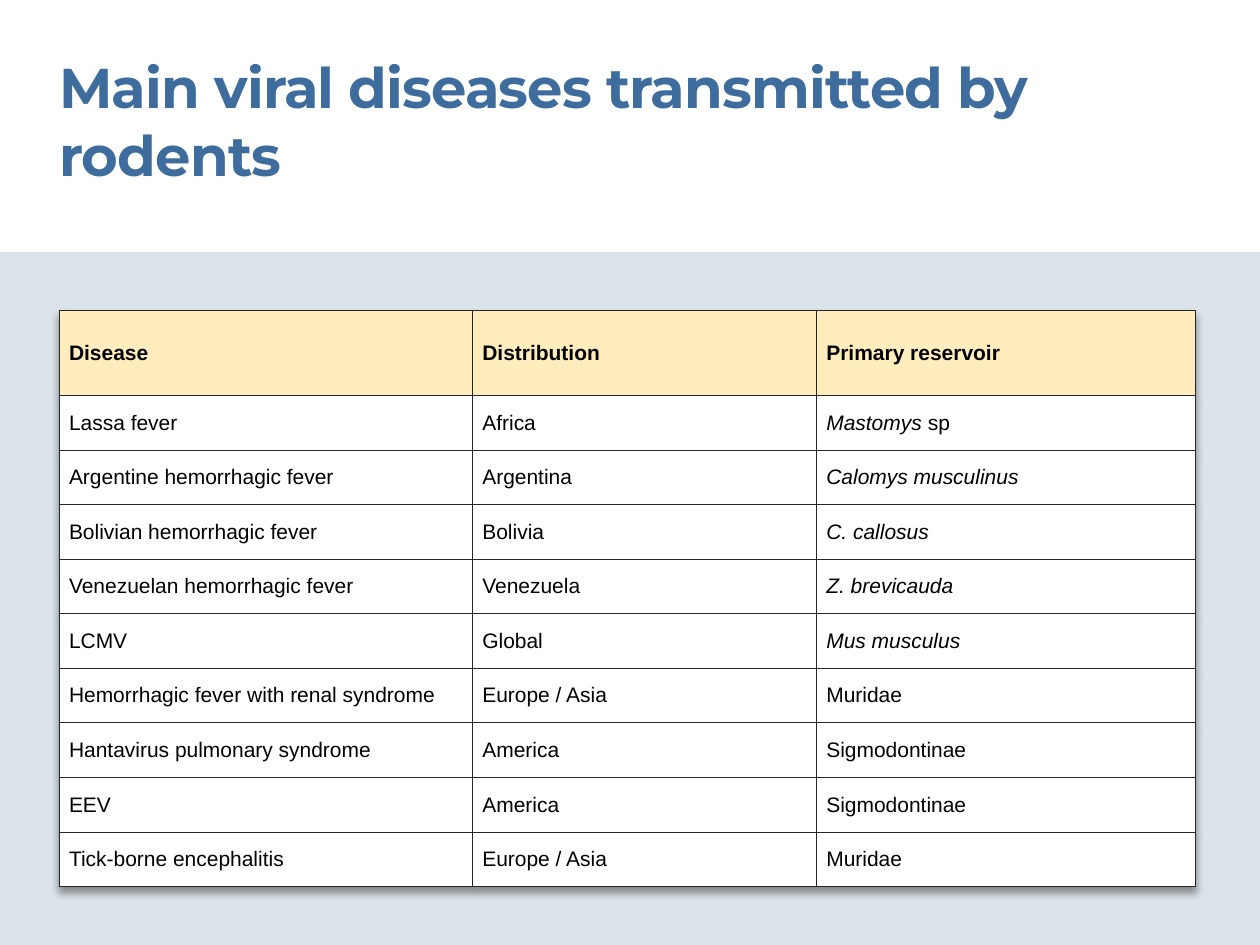
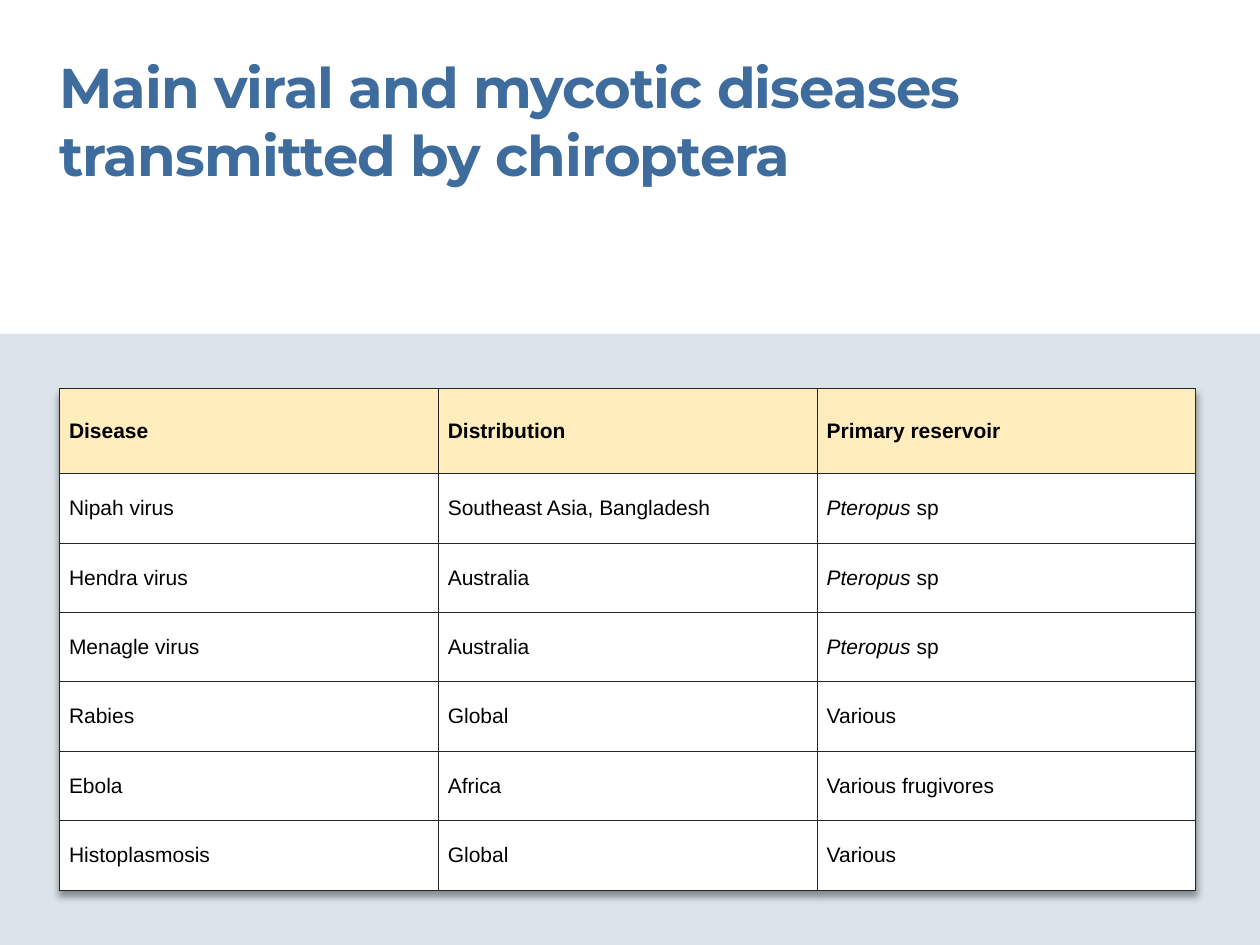
from dataclasses import dataclass

from lxml import etree
from pptx import Presentation, util as u
from pptx.dml.color import RGBColor
from pptx.enum import shapes, text
from pptx.oxml import ns


@dataclass(frozen=True)
class Theme:
    title: str = "3D6C9D"
    band: str = "DBE4EA"
    header: str = "FFEDBD"
    body: str = "FFFFFF"
    ink: str = "000000"
    border: str = "262626"
    title_font: str = "Montserrat"
    table_font: str = "Arial"
    title_size: float = 32
    table_size: float = 12
    border_width: float = 0.5


T = Theme()
WIDTH, HEIGHT = 720, 540
MARGIN = 33.84
HEADER_HEIGHT = 48.4
HEADERS = ("Disease", "Distribution", "Primary reservoir")

# Asterisks enclose italic species names
SLIDES = [
    dict(
        title="Main viral diseases transmitted by rodents",
        title_width=569.5, band_top=144, table_top=177.6,
        columns=(236.2, 196.6, 216.6), row_height=31.2,
        rows=[
            ("Lassa fever", "Africa", "*Mastomys *sp"),
            ("Argentine hemorrhagic fever", "Argentina", "*Calomys musculinus*"),
            ("Bolivian hemorrhagic fever", "Bolivia", "*C. callosus*"),
            ("Venezuelan hemorrhagic fever", "Venezuela", "*Z. brevicauda*"),
            ("LCMV", "Global", "*Mus musculus*"),
            ("Hemorrhagic fever with renal syndrome", "Europe / Asia", "Muridae"),
            ("Hantavirus pulmonary syndrome", "America", "Sigmodontinae"),
            ("EEV", "America", "Sigmodontinae"),
            ("Tick-borne encephalitis", "Europe / Asia", "Muridae"),
        ],
    ),
    dict(
        title="Main viral and mycotic diseases transmitted by chiroptera",
        title_width=590.4, band_top=190.8, table_top=222.2,
        columns=(216.5,) * 3, row_height=39.7,
        rows=[
            ("Nipah virus", "Southeast Asia, Bangladesh", "*Pteropus *sp"),
            ("Hendra virus", "Australia", "*Pteropus *sp"),
            ("Menagle virus", "Australia", "*Pteropus *sp"),
            ("Rabies", "Global", "Various"),
            ("Ebola", "Africa", "Various frugivores"),
            ("Histoplasmosis", "Global", "Various"),
        ],
    ),
]


def add_run(p, words, font, size, color, bold=False, italic=False):
    r = p.add_run()
    r.text = words
    r.font.name, r.font.size = font, u.Pt(size)
    r.font.bold, r.font.italic = bold, italic
    r.font.color.rgb = RGBColor.from_string(color)
    return r


def add_xml(parent, tag, **attrs):
    return etree.SubElement(parent, ns.qn(tag), {k: str(v) for k, v in attrs.items()})


prs = Presentation()
prs.slide_width, prs.slide_height = u.Pt(WIDTH), u.Pt(HEIGHT)

for content in SLIDES:
    s = prs.slides.add_slide(prs.slide_layouts[6])

    # Band behind the table, down to the slide's foot
    top = content["band_top"]
    band = s.shapes.add_shape(shapes.MSO_SHAPE.RECTANGLE, 0, u.Pt(top),
                              u.Pt(WIDTH), u.Pt(HEIGHT - top))
    band.shadow.inherit = False
    band.fill.solid()
    band.fill.fore_color.rgb = RGBColor.from_string(T.band)
    band.line.fill.background()

    # Title
    box = s.shapes.add_textbox(u.Pt(MARGIN), u.Pt(30.24), u.Pt(content["title_width"]), u.Pt(78))
    tf = box.text_frame
    tf.word_wrap = True
    tf.auto_size = text.MSO_AUTO_SIZE.SHAPE_TO_FIT_TEXT
    tf.margin_left = tf.margin_right = tf.margin_top = tf.margin_bottom = 0
    r = add_run(tf.paragraphs[0], content["title"], T.title_font, T.title_size, T.title, bold=True)
    r.font._element.set("spc", "-50")

    # Table grid
    rows = [HEADERS] + content["rows"]
    heights = [HEADER_HEIGHT] + [content["row_height"]] * len(content["rows"])
    frame = s.shapes.add_table(len(rows), len(HEADERS), u.Pt(MARGIN), u.Pt(content["table_top"]),
                               u.Pt(sum(content["columns"])), u.Pt(sum(heights)))
    table = frame.table
    table.horz_banding = False
    for column, width in zip(table.columns, content["columns"]):
        column.width = u.Pt(width)
    for row, height in zip(table.rows, heights):
        row.height = u.Pt(height)

    # Soft shadow under the table
    effects = etree.Element(ns.qn("a:effectLst"))
    shadow = add_xml(effects, "a:outerShdw", blurRad=u.Pt(4), dist=u.Pt(3),
                     dir=5400000, algn="t", rotWithShape=0)
    add_xml(add_xml(shadow, "a:srgbClr", val=T.ink), "a:alpha", val=40000)
    table._tbl.tblPr.insert(0, effects)

    # Cells
    for i, row in enumerate(rows):
        for j, words in enumerate(row):
            cell = table.cell(i, j)
            cell.vertical_anchor = text.MSO_ANCHOR.MIDDLE
            cell.margin_left = cell.margin_right = u.Pt(5.6)
            cell.margin_top = cell.margin_bottom = u.Pt(3.6)
            p = cell.text_frame.paragraphs[0]
            for k, part in enumerate(words.split("*")):
                if part:
                    add_run(p, part, T.table_font, T.table_size, T.ink,
                            bold=i == 0, italic=k % 2 == 1)
            tcPr = cell._tc.get_or_add_tcPr()
            for side in ("a:lnL", "a:lnR", "a:lnT", "a:lnB"):
                line = add_xml(tcPr, side, w=u.Pt(T.border_width))
                add_xml(add_xml(line, "a:solidFill"), "a:srgbClr", val=T.border)
            cell.fill.solid()
            cell.fill.fore_color.rgb = RGBColor.from_string(T.body if i else T.header)

prs.save("out.pptx")
